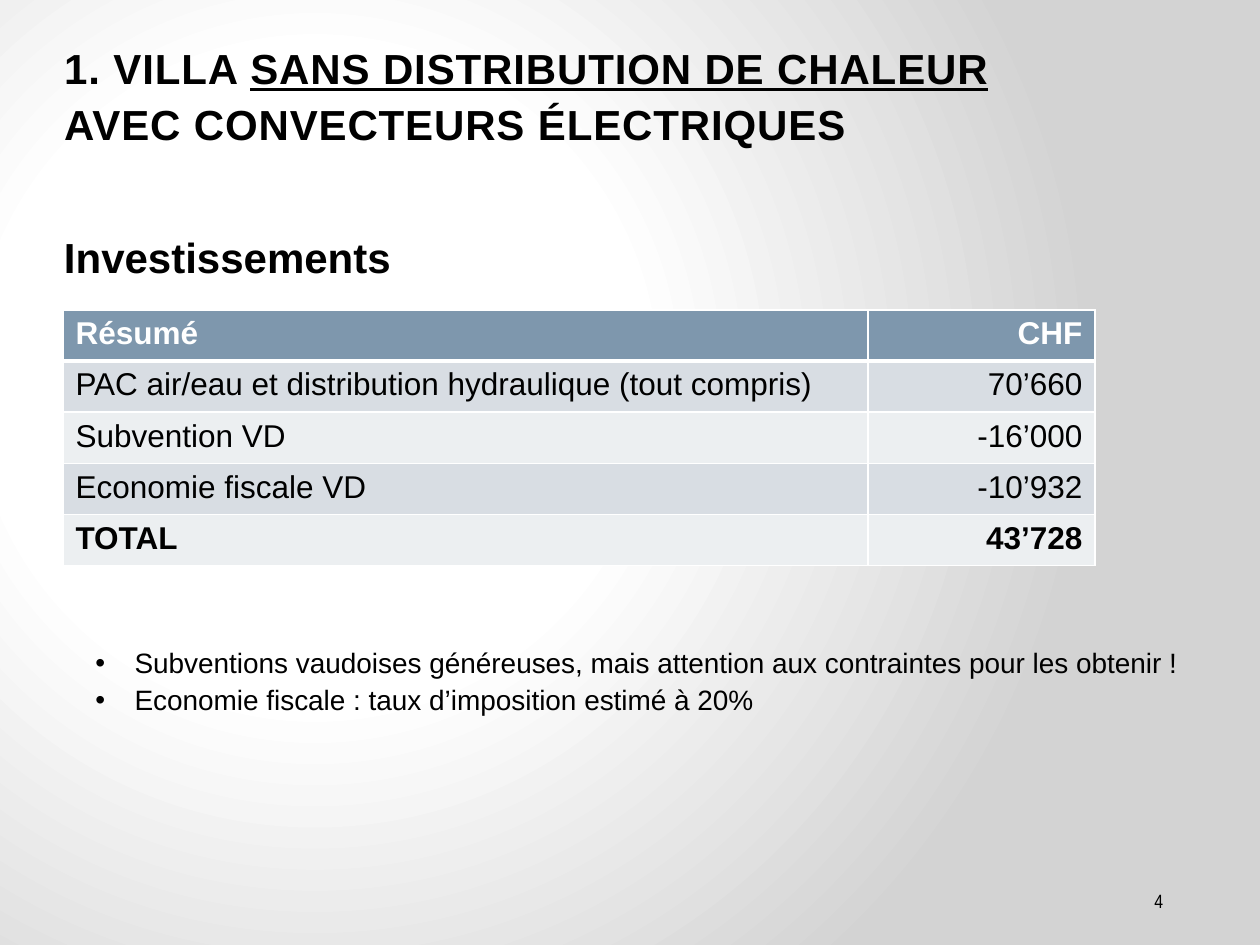
from lxml.etree import SubElement
from pptx import Presentation
from pptx.dml.color import RGBColor
from pptx.enum.text import MSO_ANCHOR, MSO_AUTO_SIZE, PP_ALIGN
from pptx.oxml.ns import qn
from pptx.util import Inches, Pt

UNIT = Inches(0.1)
COLS, ROWS = 100, 75
HUES = {
    "ink": "000000", "white": "FFFFFF", "edge": "D3D3D3",
    "head": "7E97AD", "odd": "D8DDE3", "even": "ECEFF1",
}
COSTS = [
    ("Résumé", "CHF"),
    ("PAC air/eau et distribution hydraulique (tout compris)", "70’660"),
    ("Subvention VD", "-16’000"),
    ("Economie fiscale VD", "-10’932"),
    ("TOTAL", "43’728"),
]
NOTES = [
    "Subventions vaudoises généreuses, mais attention aux contraintes pour les obtenir !",
    "Economie fiscale : taux d’imposition estimé à 20%",
]


def span(*sizes):
    return [round(size * UNIT) for size in sizes]


def style(para, size, bold=False, hue="ink", face="Arial"):
    for run in para.runs:
        font = run.font
        font.name, font.size, font.bold = face, Pt(size), bold
        font.color.rgb = RGBColor.from_string(HUES[hue])


def tint(parent, hue):
    fill = SubElement(parent, qn("a:solidFill"))
    SubElement(fill, qn("a:srgbClr"), val=HUES[hue])


def backdrop(slide):
    slide.background.fill.gradient()
    grad = slide.element.find(".//" + qn("a:gradFill"))
    for child in list(grad):
        grad.remove(child)
    stops = SubElement(grad, qn("a:gsLst"))
    for pos, hue in ((0, "white"), (41, "white"), (100, "edge")):
        stop = SubElement(stops, qn("a:gs"), pos=str(pos * 1000))
        SubElement(stop, qn("a:srgbClr"), val=HUES[hue])
    path = SubElement(grad, qn("a:path"), path="circle")
    SubElement(path, qn("a:fillToRect"), l="50000", t="80000", r="100000", b="100000")


def heading(slide):
    title = slide.shapes.title
    title.left, title.top, title.width, title.height = span(4.1, -0.2, 92.7, 12.5)
    frame = title.text_frame
    frame.auto_size = MSO_AUTO_SIZE.NONE
    frame.vertical_anchor = MSO_ANCHOR.BOTTOM
    para = frame.paragraphs[0]
    para.alignment, para.line_spacing = PP_ALIGN.LEFT, 1.1
    para.text = "1. VILLA "
    key = para.add_run()
    key.text = "SANS DISTRIBUTION DE CHALEUR"
    para.add_line_break()
    para.add_run().text = "AVEC CONVECTEURS ÉLECTRIQUES"
    style(para, 24, bold=True)
    key.font.underline = True
    for run in para.runs:
        run.font._element.set("spc", "50")


def label(slide, box, text, anchor=MSO_ANCHOR.TOP):
    frame = slide.shapes.add_textbox(*span(*box)).text_frame
    frame.word_wrap = True
    frame.vertical_anchor = anchor
    frame.text = text
    return frame.paragraphs


def bullet(para):
    para.level, para.line_spacing = 1, 1.1
    props = para._p.get_or_add_pPr()
    props.set("marL", str(Inches(0.81)))
    props.set("indent", str(Inches(-0.31)))
    SubElement(props, qn("a:buFont"), typeface="Arial")
    SubElement(props, qn("a:buChar"), char="•")
    style(para, 16)


def border(cell, row):
    props = cell._tc.get_or_add_tcPr()
    for side in "LRTB":
        thick = (row, side) in ((0, "B"), (1, "T"))
        line = SubElement(props, qn("a:ln" + side), w=str(Pt(3 if thick else 1)))
        tint(line, "white")


def costs(slide):
    table = slide.shapes.add_table(len(COSTS), 2, *span(5, 24.6, 81.9, 20.3)).table
    for col, width in zip(table.columns, span(63.9, 18)):
        col.width = width
    for row, texts in enumerate(COSTS):
        hue = "head" if row == 0 else "odd" if row % 2 else "even"
        for col, text in enumerate(texts):
            cell = table.cell(row, col)
            border(cell, row)
            cell.fill.solid()
            cell.fill.fore_color.rgb = RGBColor.from_string(HUES[hue])
            cell.text_frame.text = text
            para = cell.text_frame.paragraphs[0]
            para.alignment = PP_ALIGN.RIGHT if col else PP_ALIGN.LEFT
            style(para, 18, row in (0, len(COSTS) - 1), "ink" if row else "white")


def main():
    deck = Presentation()
    deck.slide_width, deck.slide_height = span(COLS, ROWS)
    slide = deck.slides.add_slide(deck.slide_layouts[5])
    backdrop(slide)
    heading(slide)
    page = label(slide, (82.5, 69.5, 10.8, 4), "4", MSO_ANCHOR.MIDDLE)[0]
    page.alignment = PP_ALIGN.RIGHT
    style(page, 11, face="Arial Narrow")
    topic = label(slide, (4.1, 17.5, 88.4, 5.1), "Investissements")[0]
    topic.line_spacing = 1.1
    style(topic, 24, bold=True)
    costs(slide)
    for para in label(slide, (1.6, 50.5, 93.3, 6.7), "\n".join(NOTES)):
        bullet(para)
    deck.save("out.pptx")


if __name__ == "__main__":
    main()
